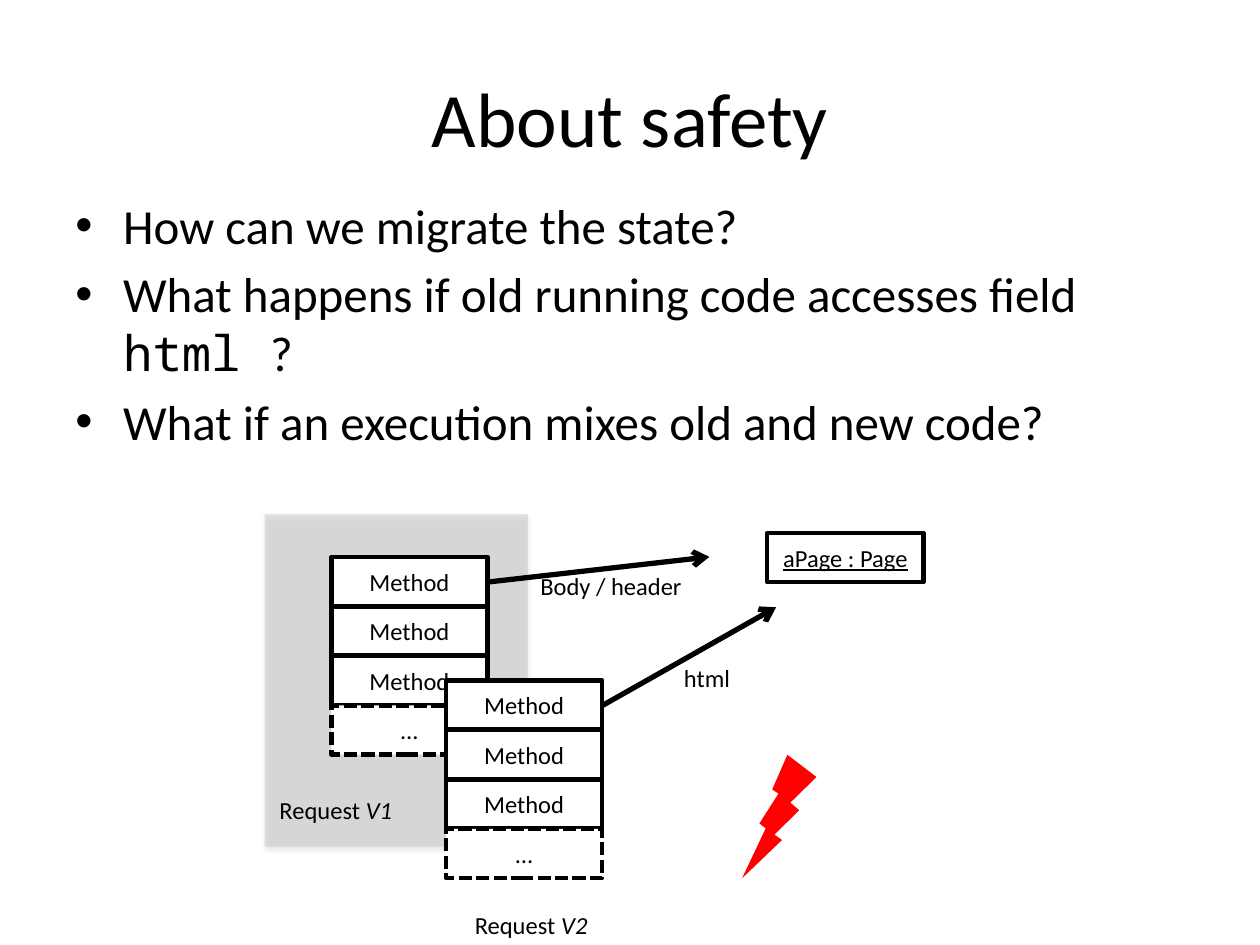
from dataclasses import dataclass

from lxml import etree
from pptx import Presentation
from pptx import util as u
from pptx.dml.color import RGBColor
from pptx.enum import dml, shapes, text
from pptx.oxml.ns import qn


@dataclass(frozen=True)
class Theme:
    black: RGBColor = RGBColor(0, 0, 0)
    white: RGBColor = RGBColor(255, 255, 255)
    grey: RGBColor = RGBColor(0xA6, 0xA6, 0xA6)
    red: RGBColor = RGBColor(255, 0, 0)
    font: str = "Calibri"
    mono: str = "Noto Sans Mono"
    title: int = 44
    body: int = 28
    label: int = 14
    border: float = 2.5
    arrow: int = 3


@dataclass(frozen=True)
class Span:
    words: str
    font: str = Theme.font
    italic: bool = False
    underline: bool = False


@dataclass(frozen=True)
class Label:
    left: float
    top: float
    width: float
    spans: tuple[Span, ...]


@dataclass(frozen=True)
class Arrow:
    start: tuple[float, float]
    end: tuple[float, float]


THEME = Theme()
BOX_WIDTH, BOX_HEIGHT = 1.24, 0.39
FRAME_STEP = 0.393
FRAMES = ("Method", "Method", "Method", "…")

QUESTIONS = (
    (Span("How can we migrate the state?"),),
    (Span("What happens if old running code accesses field "),
     Span("html ", THEME.mono), Span("?")),
    (Span("What if an execution mixes old and new code?"),),
)
LABELS = (
    Label(2.12, 6.26, 1.14, (Span("Request "), Span("V1", italic=True))),
    Label(3.67, 7.17, 1.14, (Span("Request "), Span("V2", italic=True))),
    Label(5.33, 5.21, 0.61, (Span("html"),)),
    Label(4.19, 4.48, 1.37, (Span("Body / header"),)),
)
ARROWS = (
    Arrow((4.78, 5.6), (6.16, 4.82)),
    Arrow((3.87, 4.62), (5.63, 4.42)),
)


def add_spans(paragraph, spans: tuple[Span, ...], size: int) -> None:
    for span in spans:
        run = paragraph.add_run()
        run.text = span.words
        run.font.name = span.font
        run.font.size = u.Pt(size)
        run.font.color.rgb = THEME.black
        if span.italic:
            run.font.italic = True
        if span.underline:
            run.font.underline = True


def add_plain_shape(slide, kind, left: float, top: float, width: float,
                    height: float, color: RGBColor):
    shape = slide.shapes.add_shape(kind, u.Inches(left), u.Inches(top),
                                   u.Inches(width), u.Inches(height))
    shape.shadow.inherit = False
    shape.fill.solid()
    shape.fill.fore_color.rgb = color
    shape.line.fill.background()
    return shape


def add_text_area(slide, left: float, top: float, width: float, height: float):
    area = slide.shapes.add_textbox(u.Inches(left), u.Inches(top),
                                    u.Inches(width), u.Inches(height))
    area.text_frame.word_wrap = True
    return area.text_frame


def add_title(slide) -> None:
    frame = add_text_area(slide, 0.5, 0.3, 9, 1.25)
    frame.vertical_anchor = text.MSO_ANCHOR.MIDDLE
    heading = frame.paragraphs[0]
    heading.alignment = text.PP_ALIGN.CENTER
    add_spans(heading, (Span("About safety"),), THEME.title)


def add_questions(slide) -> None:
    frame = add_text_area(slide, 0.5, 1.5, 9, 4.95)
    for index, spans in enumerate(QUESTIONS):
        question = frame.add_paragraph() if index else frame.paragraphs[0]
        question.space_before = u.Pt(0.2 * THEME.body)
        add_spans(question, spans, THEME.body)
        properties = question._p.get_or_add_pPr()
        properties.set("marL", str(u.Inches(0.38)))
        properties.set("indent", str(u.Inches(-0.38)))
        etree.SubElement(properties, qn("a:buFont"), typeface="Arial")
        etree.SubElement(properties, qn("a:buChar"), char="•")


def add_request_panel(slide) -> None:
    """Draw the translucent backdrop of the old request with its soft shadow."""
    panel = add_plain_shape(slide, shapes.MSO_SHAPE.RECTANGLE,
                            2.1, 4.08, 2.09, 2.64, THEME.grey)
    properties = panel._element.spPr
    fill_color = properties.find(qn("a:solidFill"))[0]
    etree.SubElement(fill_color, qn("a:alpha"), val="26000")
    effects = properties.find(qn("a:effectLst"))
    shadow = etree.SubElement(
        effects, qn("a:outerShdw"), blurRad=str(u.Pt(3.1)),
        dist=str(u.Pt(1.8)), dir="5400000", rotWithShape="0")
    shadow_color = etree.SubElement(shadow, qn("a:srgbClr"),
                                    val=str(THEME.black))
    etree.SubElement(shadow_color, qn("a:alpha"), val="35000")


def add_box(slide, left: float, top: float, span: Span,
            dashed: bool = False) -> None:
    box = add_plain_shape(slide, shapes.MSO_SHAPE.RECTANGLE, left, top,
                          BOX_WIDTH, BOX_HEIGHT, THEME.white)
    box.line.color.rgb = THEME.black
    box.line.width = u.Pt(THEME.border)
    if dashed:
        box.line.dash_style = dml.MSO_LINE.SQUARE_DOT
    box.text_frame.vertical_anchor = text.MSO_ANCHOR.MIDDLE
    caption = box.text_frame.paragraphs[0]
    caption.alignment = text.PP_ALIGN.CENTER
    add_spans(caption, (span,), THEME.label)


def add_call_stack(slide, left: float, top: float) -> None:
    for level, name in enumerate(FRAMES):
        add_box(slide, left, top + level * FRAME_STEP, Span(name),
                dashed=name == "…")


def add_label(slide, label: Label) -> None:
    frame = add_text_area(slide, label.left, label.top, label.width, 0.34)
    frame.word_wrap = False
    frame.auto_size = text.MSO_AUTO_SIZE.SHAPE_TO_FIT_TEXT
    add_spans(frame.paragraphs[0], label.spans, THEME.label)


def add_arrow(slide, arrow: Arrow) -> None:
    ends = [u.Inches(value) for value in arrow.start + arrow.end]
    line = slide.shapes.add_connector(shapes.MSO_CONNECTOR.STRAIGHT, *ends)
    line.line.color.rgb = THEME.black
    line.line.width = u.Pt(THEME.arrow)
    etree.SubElement(line.line._get_or_add_ln(), qn("a:tailEnd"), type="arrow")
    etree.SubElement(line._element.spPr, qn("a:effectLst"))


def main() -> None:
    deck = Presentation()
    deck.slide_width, deck.slide_height = u.Inches(10), u.Inches(7.5)
    slide = deck.slides.add_slide(deck.slide_layouts[6])

    add_title(slide)
    add_questions(slide)
    add_request_panel(slide)
    add_call_stack(slide, 2.63, 4.42)
    add_box(slide, 6.09, 4.23, Span("aPage : Page", underline=True))
    for arrow in ARROWS:
        add_arrow(slide, arrow)
    add_call_stack(slide, 3.54, 5.4)
    bolt = add_plain_shape(slide, shapes.MSO_SHAPE.LIGHTNING_BOLT,
                           5.89, 5.99, 0.59, 0.98, THEME.red)
    bolt._element.spPr.find(qn("a:xfrm")).set("flipH", "1")
    for label in LABELS:
        add_label(slide, label)

    deck.save("out.pptx")


if __name__ == "__main__":
    main()
